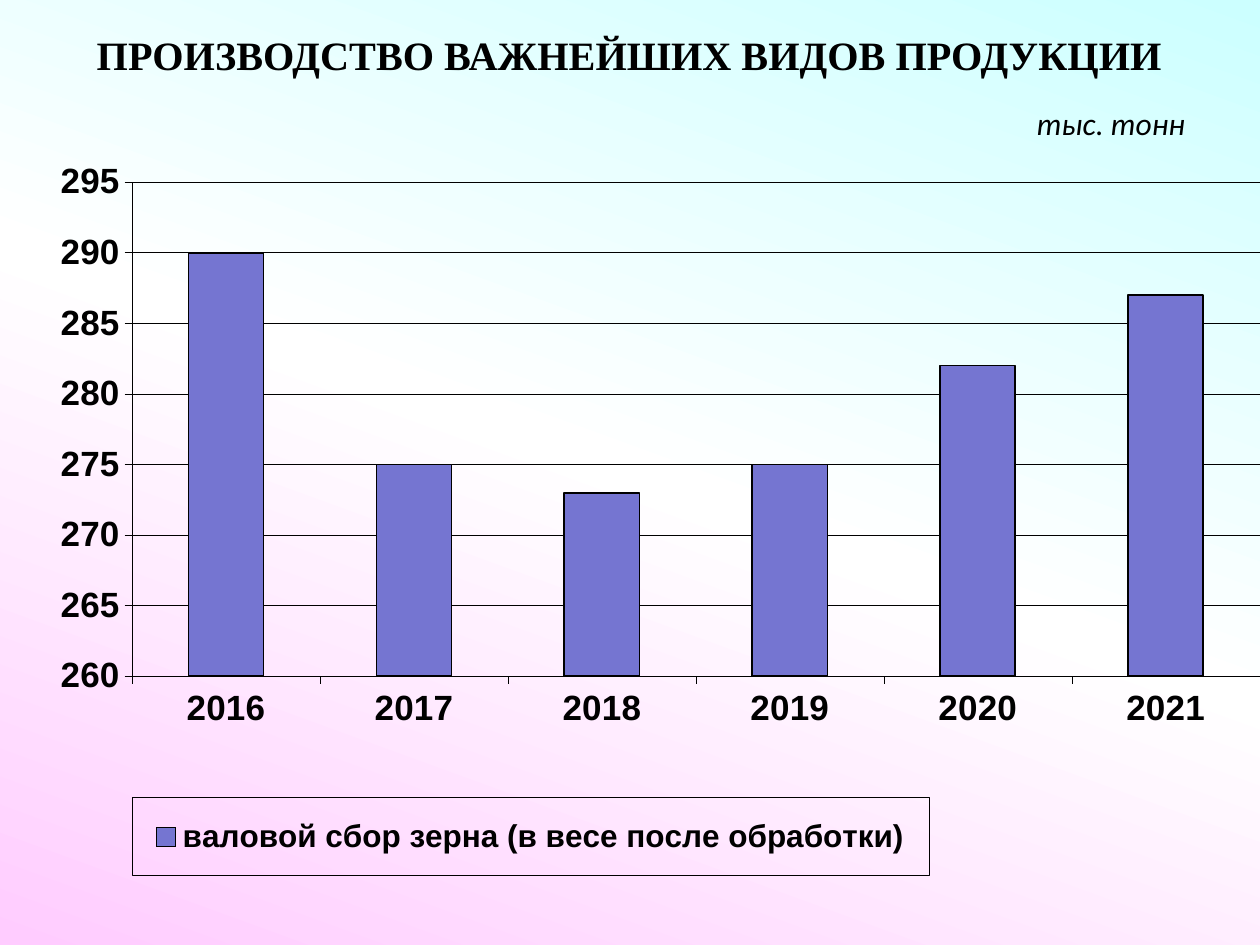
from copy import deepcopy

from lxml import etree
from pptx import Presentation
from pptx.chart.data import CategoryChartData
from pptx.dml.color import RGBColor
from pptx.enum.chart import (XL_CHART_TYPE, XL_LEGEND_POSITION,
                             XL_TICK_LABEL_POSITION, XL_TICK_MARK)
from pptx.enum.text import MSO_ANCHOR, PP_ALIGN
from pptx.oxml.ns import qn
from pptx.util import Inches, Pt

STACKED = XL_CHART_TYPE.COLUMN_STACKED
RIGHT = XL_LEGEND_POSITION.RIGHT
LOW = XL_TICK_LABEL_POSITION.LOW
OUTSIDE = XL_TICK_MARK.OUTSIDE
NO_TICK = XL_TICK_MARK.NONE
CENTER = PP_ALIGN.CENTER
MIDDLE = MSO_ANCHOR.MIDDLE

YEARS = ["2016", "2017", "2018", "2019", "2020", "2021"]
GRAIN = [290, 275, 273, 275, 282, 287]


def color(code):
    return RGBColor.from_string(code)


def node(parent, tag, **attrs):
    return etree.SubElement(parent, qn(tag), attrs)


def layout(parent, index, box, inner=False):
    """Place a chart part by fractions of the chart area."""
    for old in parent.findall(qn("c:layout")):
        parent.remove(old)
    outer = etree.Element(qn("c:layout"))
    manual = node(outer, "c:manualLayout")
    if inner:
        node(manual, "c:layoutTarget", val="inner")
    for key in ("xMode", "yMode"):
        node(manual, f"c:{key}", val="edge")
    for key, value in zip("xywh", box):
        node(manual, f"c:{key}", val=str(value))
    parent.insert(index, outer)


def clear(line=None):
    """Shape properties with no fill and an optional thin outline."""
    props = etree.Element(qn("c:spPr"))
    node(props, "a:noFill")
    edge = node(props, "a:ln", w=str(Pt(0.25)))
    if line:
        fill = node(edge, "a:solidFill")
        node(fill, "a:srgbClr", val=line)
    else:
        node(edge, "a:noFill")
    return props


class Deck:
    ink = "000000"
    bar = "7575D1"
    sky = ["CCFFFF", "FFFFFF", "FFCCFF"]

    def __init__(self):
        self.prs = Presentation()
        self.prs.slide_width = Inches(10)
        self.prs.slide_height = Inches(7.5)
        self.slide = self.prs.slides.add_slide(self.prs.slide_layouts[5])

    def font(self, font, name, size, bold=False, italic=False):
        font.name, font.size = name, Pt(size)
        font.bold, font.italic = bold, italic
        font.color.rgb = color(self.ink)

    def line(self, line, width, code=ink):
        line.color.rgb = color(code)
        line.width = Pt(width)

    def back(self):
        fill = self.slide.background.fill
        fill.gradient()
        fill.gradient_angle = 250
        stops = self.slide.element.find(".//" + qn("a:gsLst"))
        stops.append(deepcopy(stops[-1]))
        for i, (stop, code) in enumerate(zip(fill.gradient_stops, self.sky)):
            stop.color.rgb = color(code)
            stop.position = i / 2

    def title(self, text, x, y, w, h):
        shape = self.slide.shapes.title
        shape.left, shape.top = Inches(x), Inches(y)
        shape.width, shape.height = Inches(w), Inches(h)
        frame = shape.text_frame
        frame.text = text
        frame.vertical_anchor = MIDDLE
        para = frame.paragraphs[0]
        para.alignment = CENTER
        self.font(para.runs[0].font, "Times New Roman", 23, bold=True)

    def note(self, text, x, y, w, h):
        box = self.slide.shapes.add_textbox(
            Inches(x), Inches(y), Inches(w), Inches(h))
        frame = box.text_frame
        frame.word_wrap = False
        frame.text = text
        self.font(frame.paragraphs[0].runs[0].font, "Calibri", 18, italic=True)

    def axis(self, axis, tick):
        axis.major_tick_mark = tick
        axis.minor_tick_mark = NO_TICK
        self.font(axis.tick_labels.font, "Arial", 20, bold=True)
        self.line(axis.format.line, 0.25)

    def chart(self, name, cats, vals, x, y, w, h):
        data = CategoryChartData(number_format="General")
        data.categories = cats
        data.add_series(name, vals)
        chart = self.slide.shapes.add_chart(
            STACKED, Inches(x), Inches(y), Inches(w), Inches(h), data).chart
        chart.has_title = False
        self.font(chart.font, "Arial", 20, bold=True)

        # Bars
        plot = chart.plots[0]
        plot.gap_width, plot.overlap = 150, 100
        plot.vary_by_categories = False
        bars = plot.series[0]
        bars.format.fill.solid()
        bars.format.fill.fore_color.rgb = color(self.bar)
        self.line(bars.format.line, 1)

        # Axes
        self.axis(chart.category_axis, OUTSIDE)
        chart.category_axis.tick_label_position = LOW
        scale = chart.value_axis
        self.axis(scale, OUTSIDE)
        scale.minimum_scale, scale.maximum_scale = 260, 295
        scale.major_unit = 5
        scale.has_major_gridlines = True
        self.line(scale.major_gridlines.format.line, 0.25)

        # Legend
        chart.has_legend = True
        legend = chart.legend
        legend.position = RIGHT
        legend.include_in_layout = False
        self.font(legend.font, "Arial", 18, bold=True)

        # Layout and clear areas
        root = chart.element
        area = root.find(".//" + qn("c:plotArea"))
        layout(area, 0, (0.08, 0.12, 0.92, 0.57), inner=True)
        area.append(clear())
        root.find(qn("c:txPr")).addprevious(clear())
        key = root.find(".//" + qn("c:legend"))
        layout(key, 1, (0.08, 0.83, 0.65, 0.09))
        key.find(qn("c:txPr")).addprevious(clear(self.ink))


def main():
    deck = Deck()
    deck.back()
    deck.chart("валовой сбор зерна (в весе после обработки)",
               YEARS, GRAIN, 0.27, 0.62, 9.73, 6.88)
    deck.title("ПРОИЗВОДСТВО ВАЖНЕЙШИХ ВИДОВ ПРОДУКЦИИ", 0, 0.16, 10, 0.55)
    deck.note("тыс. тонн", 8.13, 0.78, 1.39, 0.4)
    deck.prs.save("out.pptx")


if __name__ == "__main__":
    main()
